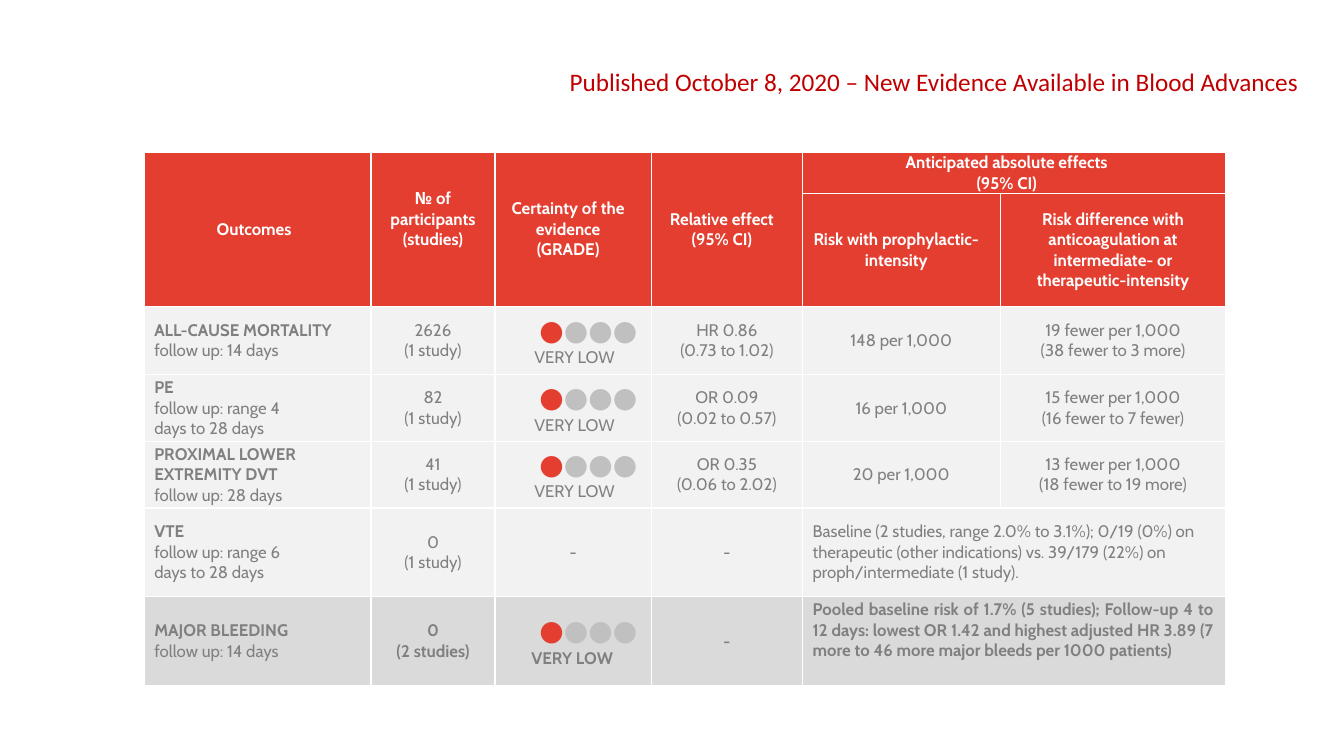
import pptx
import pptx.dml.color
import pptx.enum.text
import pptx.oxml
import pptx.oxml.ns
import pptx.util

Inches, Pt = pptx.util.Inches, pptx.util.Pt
RGBColor = pptx.dml.color.RGBColor
ALIGN = pptx.enum.text.PP_ALIGN
ANCHOR = pptx.enum.text.MSO_ANCHOR

RED = RGBColor(0xE4, 0x3E, 0x31)
DARK_RED = RGBColor(0xC0, 0x00, 0x00)
WHITE = RGBColor(0xFF, 0xFF, 0xFF)
GRAY = RGBColor(0x80, 0x80, 0x80)
DOT_GRAY = RGBColor(0xC0, 0xC0, 0xC0)
LIGHT = RGBColor(0xF2, 0xF2, 0xF2)
MEDIUM = RGBColor(0xDA, 0xDA, 0xDA)

COLUMN_WIDTHS = [2.25, 1.23, 1.55, 1.5, 1.96, 2.24]
ROW_HEIGHTS = [0.41, 1.12, 0.68, 0.66, 0.66, 0.88, 0.88]

# Row, column, last row, last column, text, left and right margins
HEADERS = [
    (0, 0, 1, 0, "Outcomes", 0, 0.07),
    (0, 1, 1, 1, "№ of participants (studies)", 0.15, 0.15),
    (0, 2, 1, 2, "Certainty of the evidence (GRADE)", 0.15, 0.25),
    (0, 3, 1, 3, "Relative effect (95% CI)", 0.1, 0.2),
    (0, 4, 0, 5, "Anticipated absolute effects (95% CI)", 0.85, 1.0),
    (1, 4, 1, 4, "Risk with prophylactic- intensity", 0, 0.1),
    (1, 5, 1, 5, "Risk difference with anticoagulation at intermediate- or "
                 "therapeutic-intensity", 0.3, 0.3),
]

# Outcome, follow-up, right margin, participants, graded, effect, risks
OUTCOMES = [
    ("ALL-CAUSE MORTALITY", "follow up: 14 days", 0.35, ["2626", "(1 study)"], True,
     ["HR 0.86", "(0.73 to 1.02)"],
     [["148 per 1,000"], ["19 fewer per 1,000", "(38 fewer to 3 more)"]]),
    ("PE", "follow up: range 4 days to 28 days", 0.65, ["82", "(1 study)"], True,
     ["OR 0.09", "(0.02 to 0.57)"],
     [["16 per 1,000"], ["15 fewer per 1,000", "(16 fewer to 7 fewer)"]]),
    ("PROXIMAL LOWER EXTREMITY DVT", "follow up: 28 days", 0.65, ["41", "(1 study)"], True,
     ["OR 0.35", "(0.06 to 2.02)"],
     [["20 per 1,000"], ["13 fewer per 1,000", "(18 fewer to 19 more)"]]),
    ("VTE", "follow up: range 6 days to 28 days", 0.65, ["0", "(1 study)"], False, ["-"],
     [["Baseline (2 studies, range 2.0% to 3.1%); 0/19 (0%) on therapeutic (other "
       "indications) vs. 39/179 (22%) on proph/intermediate (1 study)."]]),
    ("MAJOR BLEEDING", "follow up: 14 days", 0.65, ["0", "(2 studies)"], True, ["-"],
     [["Pooled baseline risk of 1.7% (5 studies); Follow-up 4 to 12 days: lowest OR 1.42 "
       "and highest adjusted HR 3.89 (7 more to 46 more major bleeds per 1000 patients)"]]),
]


def add_span(para, text, color=GRAY, **font_format):
    span = para.add_run()
    span.text = text
    values = {"name": "Cabin", "size": Pt(12), "bold": False, **font_format}
    for name, value in values.items():
        setattr(span.font, name, value)
    span.font.color.rgb = color


def set_borders(cell):
    properties = cell._tc.get_or_add_tcPr()
    namespace = pptx.oxml.ns.nsdecls("a")
    for position, side in enumerate(("lnL", "lnR", "lnT", "lnB")):
        properties.insert(position, pptx.oxml.parse_xml(
            f'<a:{side} {namespace} w="12700"><a:solidFill>'
            f'<a:srgbClr val="{WHITE}"/></a:solidFill></a:{side}>'))


def format_cell(cell, fill, left=0, right=0, top=0, anchor=ANCHOR.MIDDLE):
    values = {"margin_left": Inches(left), "margin_right": Inches(right),
              "margin_top": Inches(top), "margin_bottom": 0, "vertical_anchor": anchor}
    for name, value in values.items():
        setattr(cell, name, value)
    cell.fill.solid()
    cell.fill.fore_color.rgb = fill


def write_lines(cell, lines, align=ALIGN.CENTER, **font_format):
    """Each line is a text, or a list of (text, format) spans."""
    for index, line in enumerate(lines):
        frame = cell.text_frame
        para = frame.paragraphs[0] if index == 0 else frame.add_paragraph()
        para.alignment = align
        spans = [(line, {})] if isinstance(line, str) else line
        for text, span_format in spans:
            add_span(para, text, **{**font_format, **span_format})


def write_grade(cell, fill, bold):
    format_cell(cell, fill)
    dots = [("●", {"color": RED, "size": Pt(20), "bold": False}),
            ("●●●", {"color": DOT_GRAY, "size": Pt(20), "bold": False})]
    write_lines(cell, [dots, "VERY LOW"], ALIGN.LEFT, bold=bold)
    for para, indent in zip(cell.text_frame.paragraphs, (0.44, 0.36 if bold else 0.39)):
        para._p.get_or_add_pPr().set("marL", str(Inches(indent)))


def write_headers(table):
    for row, column, last_row, last_column, text, left, right in HEADERS:
        cell = table.cell(row, column)
        if (row, column) != (last_row, last_column):
            cell.merge(table.cell(last_row, last_column))
        format_cell(cell, RED, left, right)
        write_lines(cell, [text], color=WHITE, bold=True)
    table.cell(0, 1).margin_bottom = Inches(0.2)


def write_outcome(table, row, outcome):
    name, follow_up, right, participants, graded, effect, risks = outcome
    is_last = row == len(ROW_HEIGHTS) - 1
    fill = MEDIUM if is_last else LIGHT
    cells = [table.cell(row, column) for column in range(len(COLUMN_WIDTHS))]

    format_cell(cells[0], fill, 0.1, right)
    write_lines(cells[0], [[(name, {"bold": True})], follow_up], ALIGN.LEFT)

    if graded:
        write_grade(cells[2], fill, is_last)
    centred = [(cells[1], participants), (cells[3], effect)]
    if not graded:
        centred.append((cells[2], ["-"]))

    # A single risk text runs across both risk columns
    if len(risks) == 1:
        cells[4].merge(cells[5])
        format_cell(cells[4], fill, 0.1, 0.12)
        if is_last:
            format_cell(cells[4], fill, 0.1, 0.12, 0.03, ANCHOR.TOP)
        write_lines(cells[4], risks[0], ALIGN.JUSTIFY if is_last else ALIGN.LEFT, bold=is_last)
    else:
        centred.extend(zip(cells[4:], risks))

    for cell, lines in centred:
        format_cell(cell, fill)
        write_lines(cell, lines, bold=is_last)


def add_evidence_table(page, left, top):
    frame = page.shapes.add_table(
        len(ROW_HEIGHTS), len(COLUMN_WIDTHS), Inches(left), Inches(top),
        Inches(sum(COLUMN_WIDTHS)), Inches(sum(ROW_HEIGHTS)))
    table = frame.table
    table.first_row = table.horz_banding = False
    for column, width in zip(table.columns, COLUMN_WIDTHS):
        column.width = Inches(width)
    for row, height in zip(table.rows, ROW_HEIGHTS):
        row.height = Inches(height)
    for cell in table.iter_cells():
        set_borders(cell)
    write_headers(table)
    for row, outcome in enumerate(OUTCOMES, start=2):
        write_outcome(table, row, outcome)


def add_title(page, left, top, width, height):
    box = page.shapes.title
    for name, value in {"left": left, "top": top, "width": width, "height": height}.items():
        setattr(box, name, Inches(value))
    frame = box.text_frame
    values = {"margin_left": 0, "margin_right": 0, "margin_top": 0, "margin_bottom": 0,
              "word_wrap": False, "vertical_anchor": ANCHOR.MIDDLE,
              "auto_size": pptx.enum.text.MSO_AUTO_SIZE.NONE}
    for name, value in values.items():
        setattr(frame, name, value)
    para = frame.paragraphs[0]
    para.alignment = ALIGN.LEFT
    add_span(para, "Published October 8, 2020 – New Evidence Available in Blood Advances",
             DARK_RED, name="Calibri", size=Pt(18))


def main():
    deck = pptx.Presentation()
    deck.slide_width, deck.slide_height = Inches(13.33), Inches(7.5)
    page = deck.slides.add_slide(deck.slide_layouts.get_by_name("Title Only"))
    add_title(page, 5.65, 0.64, 7.27, 0.33)
    add_evidence_table(page, 1.43, 1.51)
    deck.save("out.pptx")


if __name__ == "__main__":
    main()
